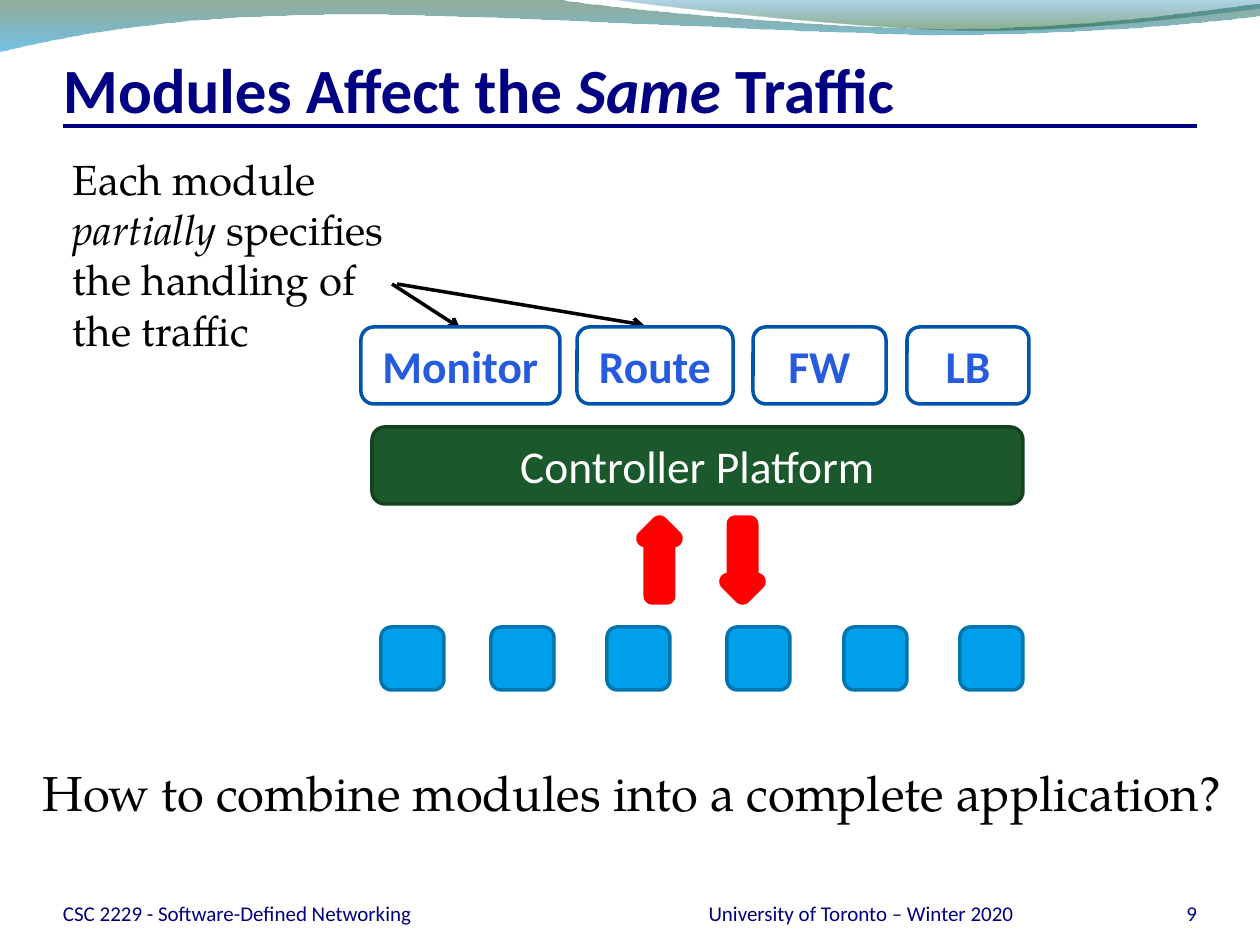
"""Builds the slide on modules that affect the same traffic."""
from dataclasses import dataclass

from lxml import etree
from pptx import Presentation
from pptx import util as u
from pptx.dml.color import RGBColor
from pptx.enum import shapes, text
from pptx.oxml import ns

PX = 914400 / 126


@dataclass(frozen=True)
class Theme:
    sans: str = "Calibri"
    serif: str = "TeX Gyre Pagella"
    title: str = "000082"
    footer: str = "00007C"
    ink: str = "000000"
    white: str = "FFFFFF"
    module_line: str = "0055AA"
    module_text: str = "275BDE"
    platform: str = "1B582B"
    platform_line: str = "144120"
    switch: str = "009FEC"
    switch_line: str = "0076AF"
    flow: str = "FF0000"
    wave_dark: str = "0F461E"
    wave_sky: str = "0090D6"
    wave_blue: str = "0076AF"
    wave_green: str = "0D5821"
    title_size: int = 36
    question_size: int = 28
    label_size: int = 26
    body_size: int = 24
    footer_size: int = 12


THEME = Theme()
KIND = shapes.MSO_SHAPE
ALIGN = text.PP_ALIGN
ANCHOR = text.MSO_ANCHOR

WAVES = [
    {"start": (0, -1),
     "segments": [[(554, -1)],
                  [(600, 8), (837, 29), (955, 29)],
                  [(1075, 29), (1207, 11), (1260, 4)],
                  [(1261, 16)],
                  [(1239, 20), (1096, 35), (940, 35)],
                  [(784, 34), (481, 13), (324, 15)],
                  [(163, 16), (58, 38), (-1, 52)]],
     "stops": [(0, THEME.wave_dark, 45), (1, THEME.wave_sky, 55)]},
    {"start": (604, -1),
     "segments": [[(641, 5), (859, 29), (969, 30)],
                  [(1079, 32), (1211, 14), (1260, 9)],
                  [(1260, -1)]],
     "stops": [(0, THEME.wave_blue, 30), (0.8, THEME.wave_green, 45)]},
]

FOOTER = {"size": THEME.footer_size, "color": THEME.footer,
          "anchor": ANCHOR.BOTTOM, "insets": (0, 0, 0, 0)}
SERIF = {"font": THEME.serif, "color": THEME.ink}
TEXTS = [
    ((63, 42, 1134, 84), [("Modules Affect the ", False), ("Same", True), (" Traffic", False)],
     {"size": THEME.title_size, "color": THEME.title, "bold": True,
      "anchor": ANCHOR.BOTTOM, "insets": (0, 6, 0, 0)}),
    ((60, 147, 359, 217),
     [("Each module ", False), ("partially", True), (" specifies the handling of the traffic", False)],
     {**SERIF, "size": THEME.body_size}),
    ((30, 756, 1208, 72), [("How to combine modules into a complete application?", False)],
     {**SERIF, "size": THEME.question_size, "wrap": False}),
    ((63, 876, 577, 50), [("CSC 2229 - Software-Defined Networking", False)], FOOTER),
    ((661, 876, 400, 50), [("University of Toronto – Winter 2020", False)],
     {**FOOTER, "align": ALIGN.CENTER}),
    ((1092, 876, 105, 50), [("9", False)], {**FOOTER, "align": ALIGN.RIGHT}),
]

MODULES = [("Monitor", 361, 199), ("Route", 577, 156), ("FW", 753, 133), ("LB", 907, 122)]
MODULE_TOP, BOX_HEIGHT = 327, 77
PLATFORM = ("Controller Platform", (372, 427, 651, BOX_HEIGHT))
SWITCH_LEFTS = [381, 491, 607, 727, 844, 960]
SWITCH_TOP, SWITCH_SIDE = 627, 63
FLOWS = [(645, 0), (728, 180)]
FLOW_TOP, FLOW_WIDTH, FLOW_HEIGHT = 524, 29, 72
POINTERS = [((392, 284), (460, 328)), ((397, 284), (644, 325))]
TITLE_RULE = ((63, 126), (1197, 126))


def emu(*lengths):
    return [u.Emu(round(length * PX)) for length in lengths]


def rgb(value):
    return RGBColor.from_string(value)


def add_child(parent, name, **attributes):
    return etree.SubElement(parent, ns.qn(name), attributes)


def write(shape, runs, style):
    frame = shape.text_frame
    layout = {"word_wrap": style.get("wrap", True),
              "vertical_anchor": style.get("anchor", ANCHOR.TOP)}
    sides = ("margin_left", "margin_top", "margin_right", "margin_bottom")
    layout.update(zip(sides, emu(*style.get("insets", (12.6, 6.3, 12.6, 6.3)))))
    for name, value in layout.items():
        setattr(frame, name, value)
    para = frame.paragraphs[0]
    para.alignment = style.get("align", ALIGN.LEFT)
    for words, italic in runs:
        span = para.add_run()
        span.text = words
        font = {"name": style.get("font", THEME.sans), "size": u.Pt(style["size"]),
                "bold": style.get("bold", False), "italic": italic}
        for name, value in font.items():
            setattr(span.font, name, value)
        span.font.color.rgb = rgb(style["color"])


def add_box(page, kind, place, fill, line, width=2):
    box = page.shapes.add_shape(kind, *emu(*place))
    box.shadow.inherit = False
    box.fill.solid()
    box.fill.fore_color.rgb = rgb(fill)
    box.line.color.rgb = rgb(line)
    box.line.width = u.Pt(width)
    return box


def add_label(box, words, color, bold):
    write(box, [(words, False)], {"size": THEME.label_size, "color": color, "bold": bold,
                                  "align": ALIGN.CENTER, "anchor": ANCHOR.MIDDLE})


def add_line(page, ends, color, width, arrow=False):
    start, end = ends
    line = page.shapes.add_connector(shapes.MSO_CONNECTOR.STRAIGHT, *emu(*start, *end))
    line.line.color.rgb = rgb(color)
    line.line.width = u.Pt(width)
    if arrow:
        add_child(line.line._get_or_add_ln(), "a:tailEnd", type="arrow")
    add_child(line._element.spPr, "a:effectLst")


def bend(wave, segments):
    sides = iter(list(wave._element.spPr.iter(ns.qn("a:lnTo"))))
    for segment in segments:
        side, *others = [next(sides) for _ in segment]
        if others:
            side.tag = ns.qn("a:cubicBezTo")
        for other in others:
            side.append(other[0])
            other.getparent().remove(other)


def add_wave(page, start, segments, stops):
    builder = page.shapes.build_freeform(*start, scale=PX)
    builder.add_line_segments([point for segment in segments for point in segment], close=True)
    wave = builder.convert_to_shape()
    bend(wave, segments)
    wave.shadow.inherit = False
    wave.line.fill.background()
    wave.fill.gradient()
    wave.fill.gradient_angle = 270
    for stop, (position, color, opacity) in zip(wave.fill.gradient_stops, stops):
        stop.position = position
        stop.color.rgb = rgb(color)
        add_child(stop._gs[0], "a:alpha", val=str(opacity * 1000))


def main():
    deck = Presentation()
    deck.slide_width, deck.slide_height = emu(1260, 945)
    page = deck.slides.add_slide(deck.slide_layouts[6])
    for wave in WAVES:
        add_wave(page, **wave)
    add_line(page, TITLE_RULE, THEME.title, 2.25)
    for place, runs, style in TEXTS:
        write(page.shapes.add_textbox(*emu(*place)), runs, style)
    for ends in POINTERS:
        add_line(page, ends, THEME.ink, 2, arrow=True)
    words, place = PLATFORM
    platform = add_box(page, KIND.ROUNDED_RECTANGLE, place, THEME.platform, THEME.platform_line)
    add_label(platform, words, THEME.white, False)
    for left in SWITCH_LEFTS:
        add_box(page, KIND.ROUNDED_RECTANGLE, (left, SWITCH_TOP, SWITCH_SIDE, SWITCH_SIDE),
                THEME.switch, THEME.switch_line)
    for left, turn in FLOWS:
        flow = add_box(page, KIND.UP_ARROW, (left, FLOW_TOP, FLOW_WIDTH, FLOW_HEIGHT),
                       THEME.platform, THEME.flow, 10)
        flow.rotation = turn
        add_child(flow.line._get_or_add_ln(), "a:round")
    for words, left, width in MODULES:
        module = add_box(page, KIND.ROUNDED_RECTANGLE, (left, MODULE_TOP, width, BOX_HEIGHT),
                         THEME.white, THEME.module_line)
        add_label(module, words, THEME.module_text, True)
    deck.save("out.pptx")


if __name__ == "__main__":
    main()
